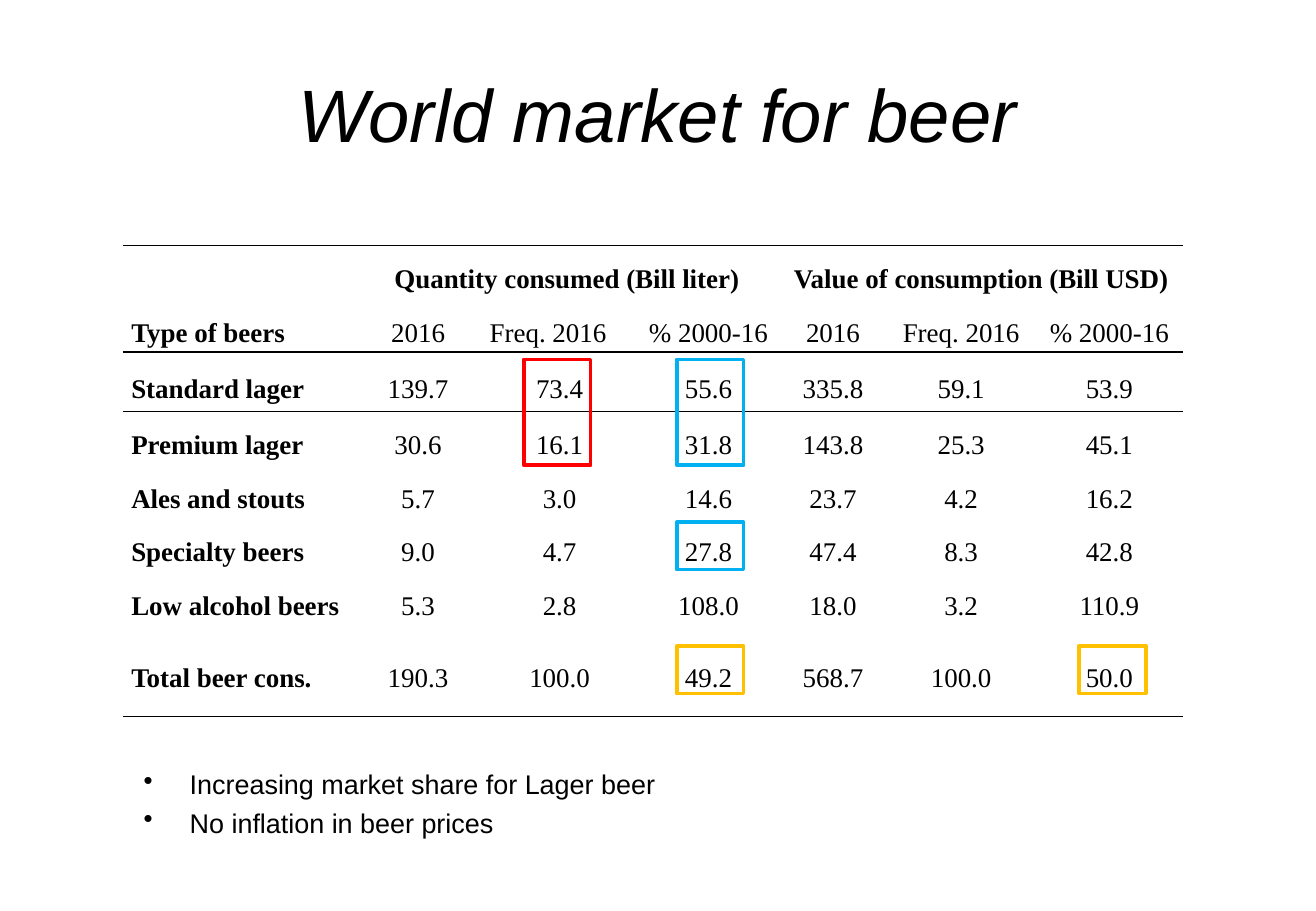
from lxml.etree import SubElement
from pptx import Presentation
from pptx.dml.color import RGBColor
from pptx.enum.shapes import MSO_SHAPE
from pptx.enum.text import MSO_ANCHOR, PP_ALIGN
from pptx.oxml import parse_xml
from pptx.oxml.ns import nsdecls, qn
from pptx.util import Inches, Pt

COLOURS = {"ink": "000000", "red": "FF0000", "blue": "00B0F0", "gold": "FFC000"}
NO_GRID_STYLE = "{2D5ABB26-0587-4C30-8999-92F81FD0307C}"

COLUMN_WIDTHS = [1.91, 1.04, 1.29, 1.16, 0.89, 1.22, 1.22]
ROW_HEIGHTS = [0.44, 0.44, 0.49, 0.44, 0.44, 0.44, 0.44, 0.75]
BEER_ROWS = [
    ["", "Quantity consumed (Bill liter)", "", "", "Value of consumption (Bill USD)", "", ""],
    ["Type of beers"] + ["2016", "Freq. 2016", "% 2000-16"] * 2,
    ["Standard lager", "139.7", "73.4", "55.6", "335.8", "59.1", "53.9"],
    ["Premium lager", "30.6", "16.1", "31.8", "143.8", "25.3", "45.1"],
    ["Ales and stouts", "5.7", "3.0", "14.6", "23.7", "4.2", "16.2"],
    ["Specialty beers", "9.0", "4.7", "27.8", "47.4", "8.3", "42.8"],
    ["Low alcohol beers", "5.3", "2.8", "108.0", "18.0", "3.2", "110.9"],
    ["Total beer cons.", "190.3", "100.0", "49.2", "568.7", "100.0", "50.0"],
]
RULES = {0: "lnT", 1: "lnB", 2: "lnT", 7: "lnB"}
LEFT_ALIGNED_HEADING = (1, 2)

# Left, top and height as percentages of the slide
HIGHLIGHTS = [
    (39.8, 39.47, 11.6, "red"),
    (51.43, 39.47, 11.6, "blue"),
    (51.43, 57.33, 5.2, "blue"),
    (51.43, 70.93, 5.2, "gold"),
    (82, 70.93, 5.2, "gold"),
]
HIGHLIGHT_WIDTH = 5.08


class SlideBuilder:
    """Places elements by percentages of the slide's width and height."""

    def __init__(self, deck):
        self.deck = deck
        self.page = deck.slides.add_slide(deck.slide_layouts[6])

    def place(self, left, top, width, height):
        across, down = self.deck.slide_width / 100, self.deck.slide_height / 100
        return [round(value) for value in (left * across, top * down, width * across, height * down)]

    def style(self, para, size, font="Arial", bold=False, italic=False):
        para.font.name = font
        para.font.size = Pt(size)
        para.font.bold = bold
        para.font.italic = italic
        para.font.color.rgb = RGBColor.from_string(COLOURS["ink"])

    def text_frame(self, area):
        frame = self.page.shapes.add_textbox(*self.place(*area)).text_frame
        frame.word_wrap = True
        return frame

    def title(self, text, *area):
        frame = self.text_frame(area)
        frame.vertical_anchor = MSO_ANCHOR.MIDDLE
        para = frame.paragraphs[0]
        para.text = text
        para.alignment = PP_ALIGN.CENTER
        self.style(para, 44, italic=True)

    def bullets(self, lines, *area):
        frame = self.text_frame(area)
        for index, line in enumerate(lines):
            para = frame.add_paragraph() if index else frame.paragraphs[0]
            para.text = line
            if index:
                para.space_before = Pt(3.8)
            self.style(para, 16)
            properties = para._p.get_or_add_pPr()
            properties.set("marL", str(Inches(0.38)))
            properties.set("indent", str(-Inches(0.38)))
            bullet = SubElement(properties, qn("a:buChar"), char="•")
            properties.find(qn("a:defRPr")).addprevious(bullet)

    def table(self, rows, *area):
        table = self.page.shapes.add_table(len(rows), len(rows[0]), *self.place(*area)).table
        table.first_row = table.horz_banding = False
        table._tbl.tblPr.find(qn("a:tableStyleId")).text = NO_GRID_STYLE
        for column, width in zip(table.columns, COLUMN_WIDTHS):
            column.width = Inches(width)
        for row, height in zip(table.rows, ROW_HEIGHTS):
            row.height = Inches(height)
        for first in (1, 4):
            table.cell(0, first).merge(table.cell(0, first + 2))
        for row, values in enumerate(rows):
            for column, value in enumerate(values):
                cell = table.cell(row, column)
                self.fill_cell(cell, value, row, column)
                if row in RULES:
                    self.rule(cell, RULES[row])

    def fill_cell(self, cell, value, row, column):
        cell.fill.background()
        cell.vertical_anchor = MSO_ANCHOR.MIDDLE
        cell.margin_left = cell.margin_right = Inches(0.07)
        cell.margin_top = cell.margin_bottom = 0
        para = cell.text_frame.paragraphs[0]
        para.text = value
        para.line_spacing = 1.5
        at_left = column == 0 or (row, column) == LEFT_ALIGNED_HEADING
        para.alignment = PP_ALIGN.LEFT if at_left else PP_ALIGN.CENTER
        bold = row == 0 or column == 0
        self.style(para, 16, "Times New Roman", bold)
        for span in para.runs:
            span.font.size, span.font.name, span.font.bold = Pt(16), "Times New Roman", bold

    def rule(self, cell, side):
        line = parse_xml(
            f'<a:{side} {nsdecls("a")} w="{Pt(1)}"><a:solidFill>'
            f'<a:srgbClr val="{COLOURS["ink"]}"/></a:solidFill></a:{side}>'
        )
        cell._tc.get_or_add_tcPr().insert(0, line)

    def highlight(self, left, top, height, colour):
        area = self.place(left, top, HIGHLIGHT_WIDTH, height)
        box = self.page.shapes.add_shape(MSO_SHAPE.RECTANGLE, *area)
        box.shadow.inherit = False
        box.fill.background()
        box.line.color.rgb = RGBColor.from_string(COLOURS[colour])
        box.line.width = Pt(2.25)


def main():
    deck = Presentation()
    deck.slide_width, deck.slide_height = Inches(10.83), Inches(7.5)
    slide = SlideBuilder(deck)

    # Heading
    slide.title("World market for beer", 5, 4, 90, 16.67)

    # Market figures
    slide.table(BEER_ROWS, 9.33, 26.93, 80.7, 51.47)

    # Conclusions
    slide.bullets(
        ["Increasing market share for Lager beer", "No inflation in beer prices"],
        10, 83.6, 90, 11.6,
    )

    # Frames around the key figures
    for frame in HIGHLIGHTS:
        slide.highlight(*frame)

    deck.save("out.pptx")


if __name__ == "__main__":
    main()
